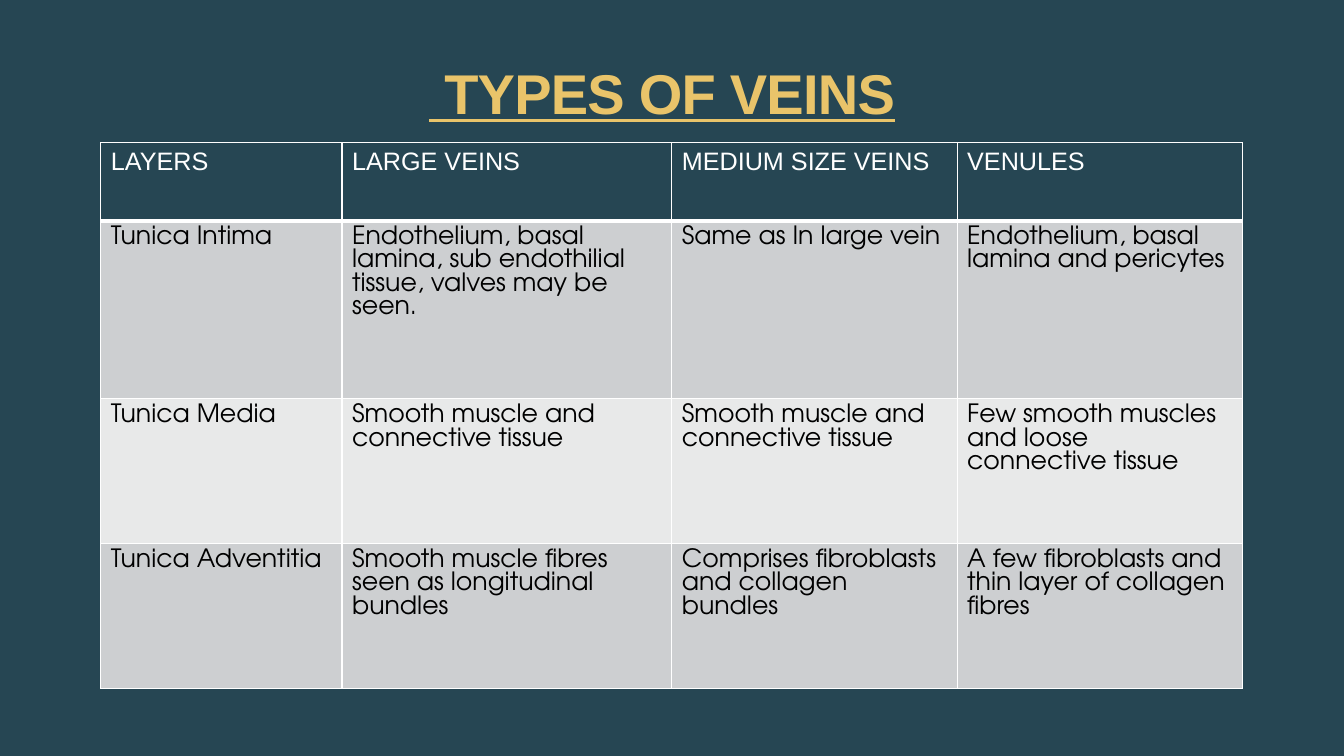
"""Build the slide comparing the wall layers of large veins, medium veins and venules."""
from lxml import etree
from pptx import Presentation
from pptx import util as u
from pptx.dml.color import RGBColor
from pptx.enum import text as t
from pptx.oxml.ns import qn

COLORS = {
    "navy": "264653", "gold": "E9C46A", "white": "FFFFFF",
    "black": "000000", "grey": "CDCFD1", "pale": "E8E9E9",
}


def write(frame, words, size=18, font="TeX Gyre Adventor", color="black",
          bold=False, underline=False, align=t.PP_ALIGN.LEFT, spacing=0):
    paragraph = frame.paragraphs[0]
    paragraph.alignment = align
    run = paragraph.add_run()
    run.text = words
    run.font.size = u.Pt(size)
    run.font.name = font
    run.font.bold = bold
    run.font.underline = underline
    run.font.color.rgb = RGBColor.from_string(COLORS[color])
    if spacing:
        run.font._element.set("spc", str(spacing))


def add_borders(cell, bottom):
    properties = cell._tc.get_or_add_tcPr()
    for place, (side, points) in enumerate([("L", 1), ("R", 1), ("T", 1), ("B", bottom)]):
        line = etree.Element(qn(f"a:ln{side}"), w=str(u.Pt(points)))
        fill = etree.SubElement(line, qn("a:solidFill"))
        etree.SubElement(fill, qn("a:srgbClr"), val=COLORS["white"])
        properties.insert(place, line)


deck = Presentation()
deck.slide_width, deck.slide_height = u.Cm(33.87), u.Cm(19.05)
slide = deck.slides.add_slide(deck.slide_layouts[6])
slide.background.fill.solid()
slide.background.fill.fore_color.rgb = RGBColor.from_string(COLORS["navy"])

title = slide.shapes.add_textbox(u.Cm(3.99), u.Cm(1.47), u.Cm(25.4), u.Cm(1.7)).text_frame
title.word_wrap = True
title.vertical_anchor = t.MSO_ANCHOR.BOTTOM
title.margin_left = title.margin_right = title.margin_top = title.margin_bottom = 0
write(title, " TYPES OF VEINS", size=40, font="Arial", color="gold", bold=True,
      underline=True, align=t.PP_ALIGN.CENTER, spacing=-50)

layers = [
    ["LAYERS", "LARGE VEINS", "MEDIUM SIZE VEINS", "VENULES"],
    ["Tunica Intima",
     "Endothelium, basal lamina, sub endothilial tissue, valves may be seen.",
     "Same as In large vein",
     "Endothelium, basal lamina and pericytes"],
    ["Tunica Media",
     "Smooth muscle and connective tissue",
     "Smooth muscle and connective tissue",
     "Few smooth muscles and loose connective tissue"],
    ["Tunica Adventitia",
     "Smooth muscle fibres seen as longitudinal bundles",
     "Comprises fibroblasts and collagen bundles",
     "A few fibroblasts and thin layer of collagen fibres"],
]
widths = [6.08, 8.31, 7.19, 7.2]
heights = [1.96, 4.49, 3.65, 3.65]
row_fills = ["navy", "grey", "pale", "grey"]

veins = slide.shapes.add_table(len(heights), len(widths), u.Cm(2.54), u.Cm(3.6),
                               u.Cm(sum(widths)), u.Cm(sum(heights))).table
for column, width in zip(veins.columns, widths):
    column.width = u.Cm(width)
for index, (row, height, entries) in enumerate(zip(veins.rows, heights, layers)):
    row.height = u.Cm(height)
    header = index == 0
    style = {"font": "Arial", "color": "white"} if header else {}
    for cell, words in zip(row.cells, entries):
        cell.fill.solid()
        cell.fill.fore_color.rgb = RGBColor.from_string(COLORS[row_fills[index]])
        add_borders(cell, bottom=3 if header else 1)
        write(cell.text_frame, words, **style)

deck.save("out.pptx")
